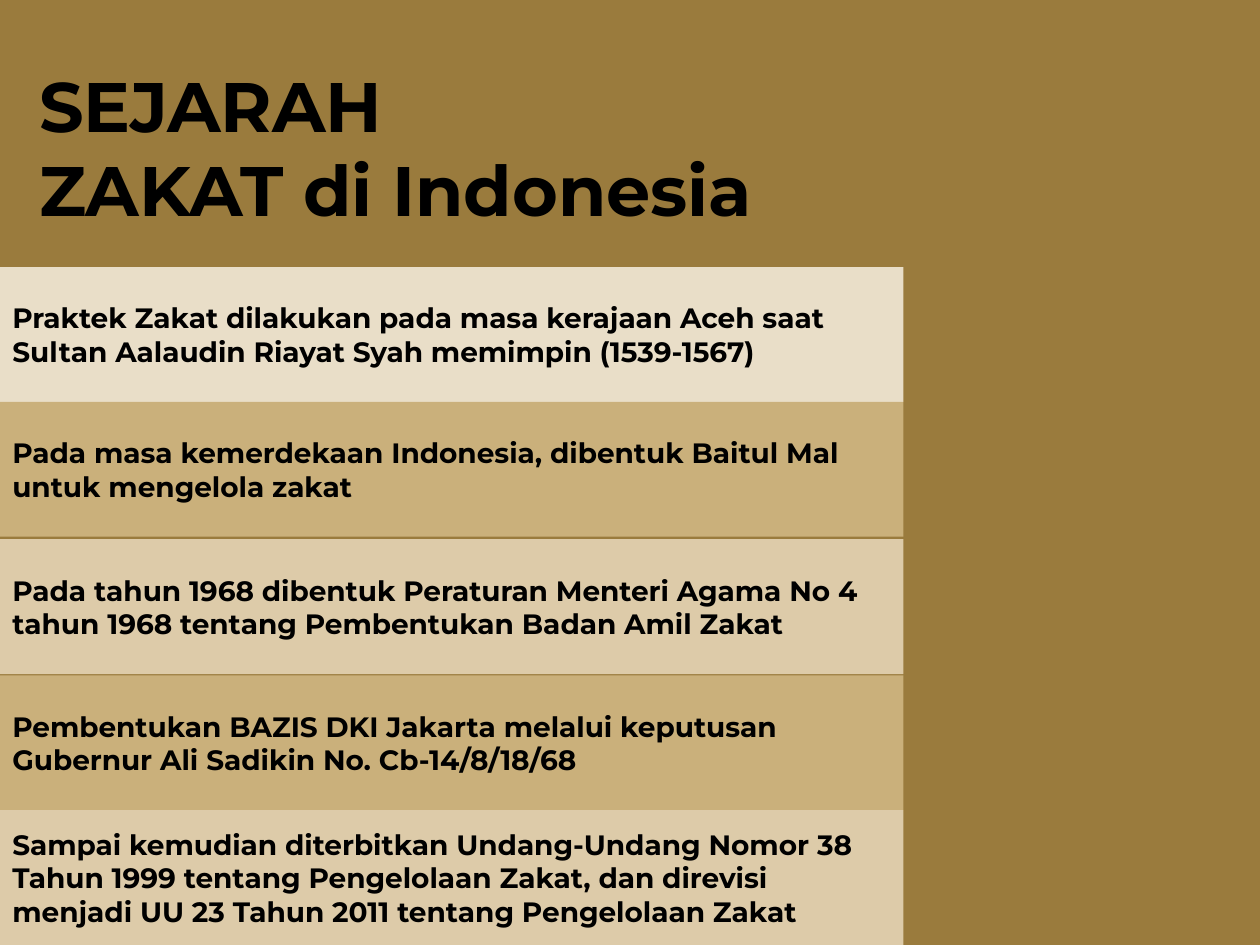
import pptx
import pptx.dml.color
import pptx.enum.shapes
import pptx.enum.text
import pptx.util

COLUMNS, ROWS = 100, 75
BANDS = [
    (21.2, "E9DEC8", "Praktek Zakat dilakukan pada masa kerajaan Aceh saat "
     "Sultan Aalaudin Riayat Syah memimpin (1539-1567)"),
    (31.9, "CAB07B", "Pada masa kemerdekaan Indonesia, dibentuk Baitul Mal "
     "untuk mengelola zakat"),
    (42.8, "DDCBA9", "Pada tahun 1968 dibentuk Peraturan Menteri Agama No 4 "
     "tahun 1968 tentang Pembentukan Badan Amil Zakat"),
    (53.6, "CAB07B", "Pembentukan BAZIS DKI Jakarta melalui keputusan "
     "Gubernur Ali Sadikin No. Cb-14/8/18/68"),
    (64.3, "DDCBA9", "Sampai kemudian diterbitkan Undang-Undang Nomor 38 "
     "Tahun 1999 tentang Pengelolaan Zakat, dan direvisi "
     "menjadi UU 23 Tahun 2011 tentang Pengelolaan Zakat"),
]


def color(code):
    return pptx.dml.color.RGBColor.from_string(code)


class HistorySlide:
    font = "Montserrat"
    ink = "000000"
    background = "9A7B3D"

    def __init__(self, deck):
        self.column = deck.slide_width / COLUMNS
        self.row = deck.slide_height / ROWS
        self.slide = deck.slides.add_slide(deck.slide_layouts[5])
        fill = self.slide.background.fill
        fill.solid()
        fill.fore_color.rgb = color(self.background)

    def area(self, left, top, width, height):
        return (round(left * self.column), round(top * self.row),
                round(width * self.column), round(height * self.row))

    def add_text(self, box, lines, size, anchor):
        frame = box.text_frame
        frame.word_wrap = True
        frame.auto_size = pptx.enum.text.MSO_AUTO_SIZE.NONE
        frame.vertical_anchor = anchor
        inset = pptx.util.Inches(0.1)
        frame.margin_left = frame.margin_right = inset
        frame.margin_top = frame.margin_bottom = inset
        para = frame.paragraphs[0]
        para.alignment = pptx.enum.text.PP_ALIGN.LEFT
        for number, line in enumerate(lines):
            if number:
                para.add_line_break()
            span = para.add_run()
            span.text = line
            span.font.name = self.font
            span.font.size = pptx.util.Pt(size)
            span.font.bold = True
            span.font.color.rgb = color(self.ink)

    def title(self, lines, *place):
        box = self.slide.shapes.title
        box.left, box.top, box.width, box.height = self.area(*place)
        self.add_text(box, lines, 40, pptx.enum.text.MSO_ANCHOR.TOP)

    def band(self, text, fill, *place):
        box = self.slide.shapes.add_shape(
            pptx.enum.shapes.MSO_SHAPE.RECTANGLE, *self.area(*place))
        box.shadow.inherit = False
        box.fill.solid()
        box.fill.fore_color.rgb = color(fill)
        box.line.fill.background()
        self.add_text(box, [text], 16, pptx.enum.text.MSO_ANCHOR.MIDDLE)


def main():
    deck = pptx.Presentation()
    deck.slide_width = pptx.util.Inches(10)
    deck.slide_height = pptx.util.Inches(7.5)
    page = HistorySlide(deck)
    page.title(["SEJARAH", "ZAKAT di Indonesia"], 2.1, 4, 59.2, 12.8)
    for top, fill, text in BANDS:
        page.band(text, fill, 0, top, 71.7, 10.7)
    deck.save("out.pptx")


if __name__ == "__main__":
    main()
